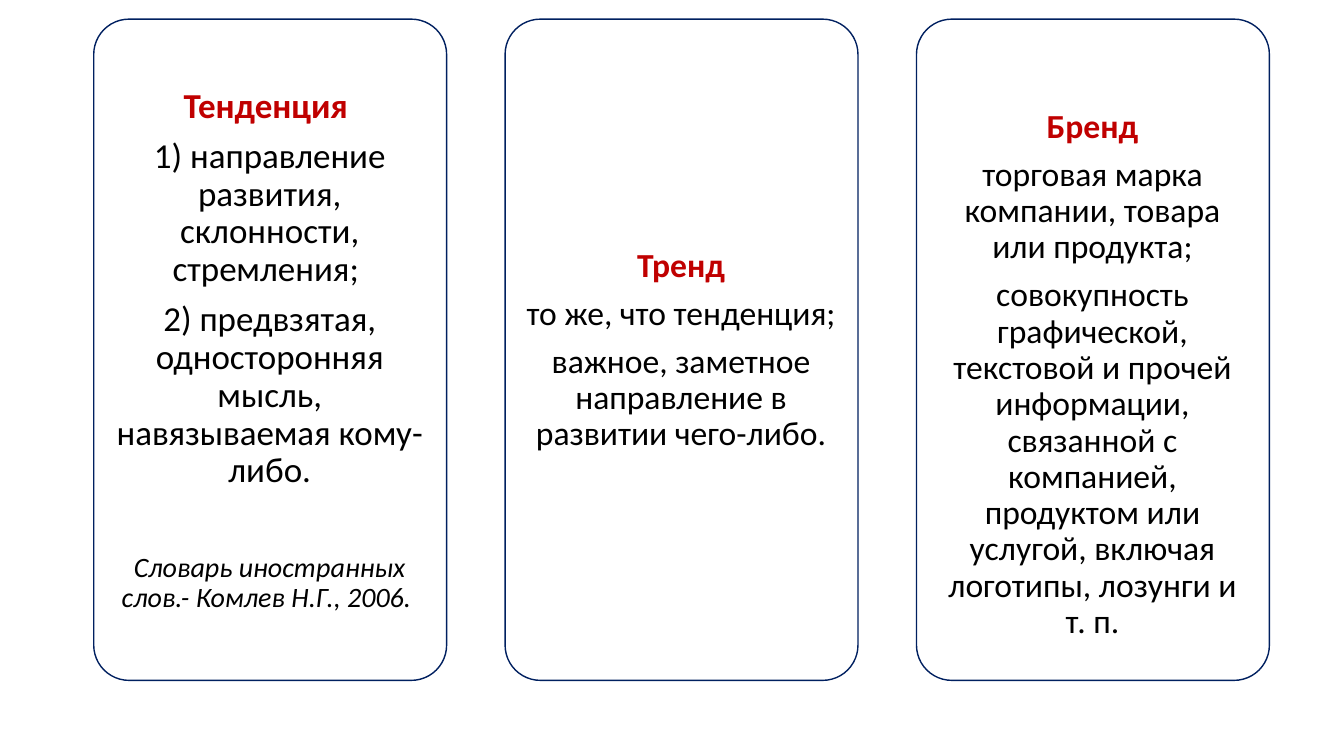
from dataclasses import dataclass

from pptx import Presentation
from pptx.dml.color import RGBColor
from pptx.enum.shapes import MSO_SHAPE as Shape
from pptx.enum.text import MSO_ANCHOR as Anchor, PP_ALIGN as Align
from pptx.util import Inches, Pt


@dataclass(frozen=True)
class Theme:
    font: str = "Calibri"
    outline: RGBColor = RGBColor(0x00, 0x20, 0x60)
    heading: RGBColor = RGBColor(0xC0, 0x00, 0x00)
    body: RGBColor = RGBColor(0x00, 0x00, 0x00)
    large: int = 25
    regular: int = 24
    source: int = 20


CARD_LEFT, CARD_TOP, CARD_STEP = 0.93, 0.19, 4.08
CARD_WIDTH, CARD_HEIGHT = 3.5, 6.56
TEXT_OFFSET_X, TEXT_OFFSET_Y = 0.1, 0.11
TEXT_WIDTH, TEXT_HEIGHT = 3.29, 6.36
INSET = 0.1

THEME = Theme()
CARDS = [
    {
        "heading": "Тенденция ",
        "definitions": [
            "1) направление развития, склонности, стремления; ",
            "2) предвзятая, односторонняя мысль, навязываемая кому-либо.",
        ],
        "source": "Словарь иностранных слов.- Комлев Н.Г., 2006. ",
        "size": THEME.large,
    },
    {
        "heading": "Тренд",
        "definitions": [
            "то же, что тенденция; ",
            "важное, заметное направление в развитии чего-либо.",
        ],
        "size": THEME.regular,
    },
    {
        "heading": "Бренд",
        "definitions": [
            "торговая марка компании, товара или продукта;",
            "совокупность графической, текстовой и прочей информации, связанной "
            "с компанией, продуктом или услугой, включая логотипы, лозунги и т. п.",
        ],
        "size": THEME.regular,
        "extra_top": 0.48,
    },
]


def apply_format(target, values):
    for name, value in values.items():
        setattr(target, name, value)


class SlideBuilder:
    def __init__(self, slide, theme):
        self.slide = slide
        self.theme = theme

    def add_frame(self, left, top):
        shape = self.slide.shapes.add_shape(
            Shape.ROUNDED_RECTANGLE, Inches(left), Inches(top),
            Inches(CARD_WIDTH), Inches(CARD_HEIGHT))
        shape.adjustments[0] = 0.1
        shape.shadow.inherit = False
        shape.fill.background()
        shape.line.color.rgb = self.theme.outline
        shape.line.width = Pt(1)

    def add_text_box(self, left, top, extra_top):
        """Return the text frame; extra_top lowers its centred text."""
        box = self.slide.shapes.add_textbox(
            Inches(left), Inches(top), Inches(TEXT_WIDTH), Inches(TEXT_HEIGHT))
        apply_format(box.text_frame, {
            "word_wrap": True,
            "vertical_anchor": Anchor.MIDDLE,
            "margin_left": Inches(INSET),
            "margin_right": Inches(INSET),
            "margin_top": Inches(INSET + extra_top),
            "margin_bottom": Inches(INSET),
        })
        return box.text_frame

    def fill_paragraph(self, paragraph, text, size, color, space_before=0, **font_format):
        apply_format(paragraph, {
            "alignment": Align.CENTER,
            "line_spacing": 0.9,
            "space_before": Pt(space_before),
            "space_after": Pt(0.35 * size),
        })
        run = paragraph.add_run()
        run.text = text
        apply_format(run.font, {"name": self.theme.font, "size": Pt(size), **font_format})
        run.font.color.rgb = color

    def add_card(self, left, top, heading, definitions, size, source=None, extra_top=0):
        self.add_frame(left, top)
        frame = self.add_text_box(left + TEXT_OFFSET_X, top + TEXT_OFFSET_Y, extra_top)
        self.fill_paragraph(frame.paragraphs[0], heading, size, self.theme.heading, bold=True)
        for definition in definitions:
            self.fill_paragraph(frame.add_paragraph(), definition, size, self.theme.body)
        if source:
            self.fill_paragraph(frame.add_paragraph(), source, self.theme.source,
                                self.theme.body, space_before=36, italic=True)


def main():
    presentation = Presentation()
    presentation.slide_width = Inches(13.33)
    presentation.slide_height = Inches(7.5)
    slide = presentation.slides.add_slide(presentation.slide_layouts[6])
    builder = SlideBuilder(slide, THEME)
    for index, card in enumerate(CARDS):
        builder.add_card(CARD_LEFT + index * CARD_STEP, CARD_TOP, **card)
    presentation.save("out.pptx")


if __name__ == "__main__":
    main()
